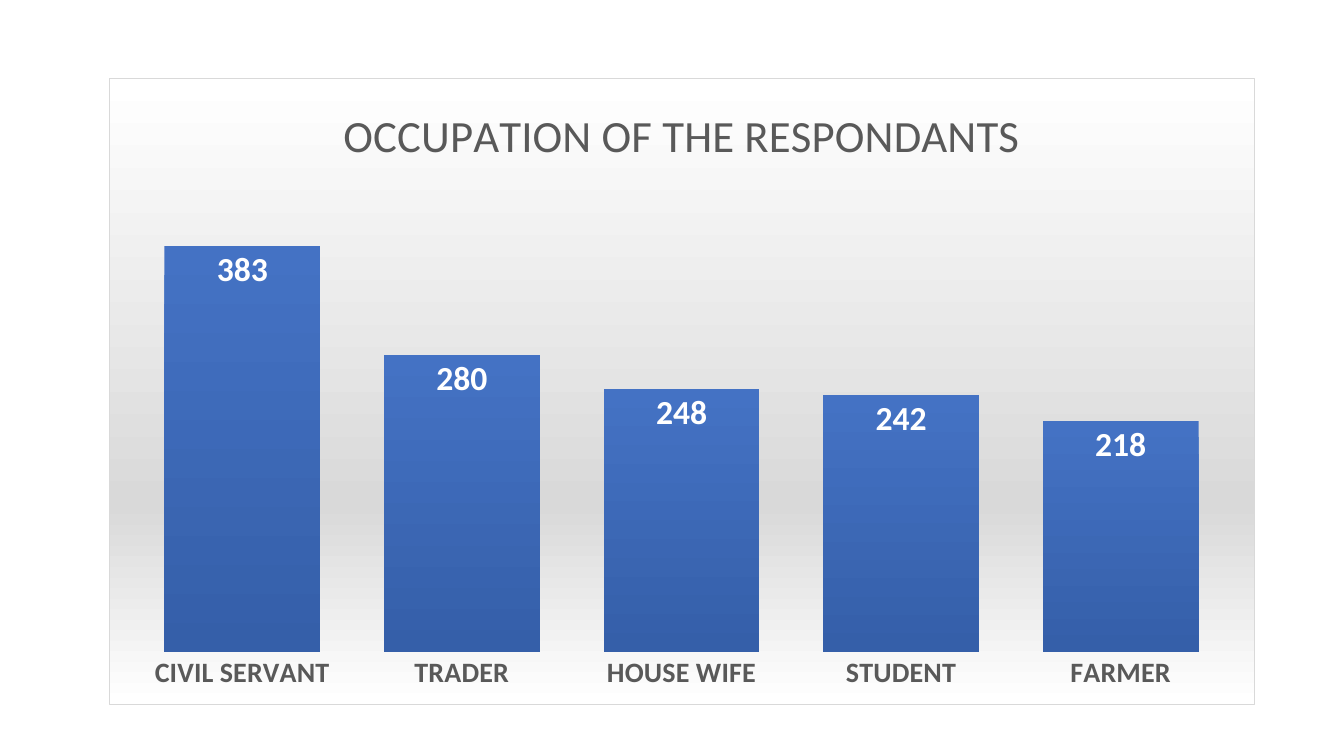
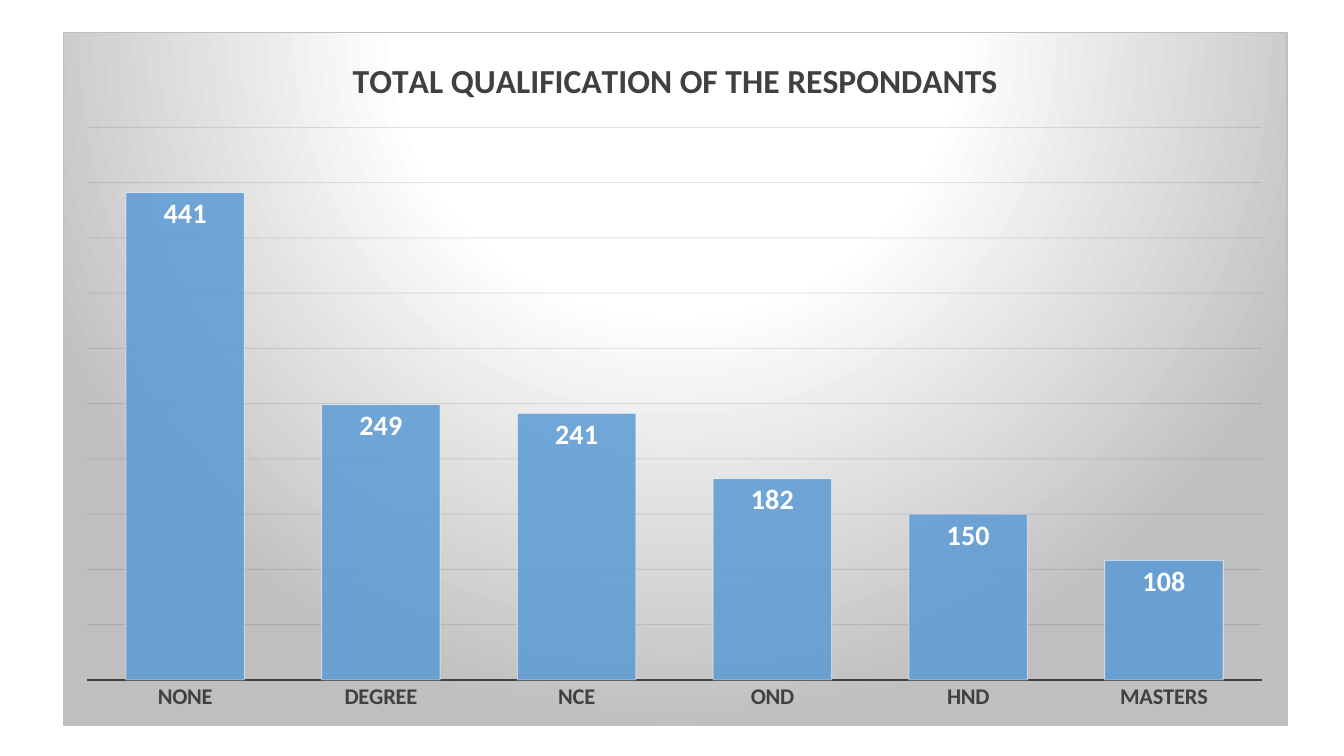
from dataclasses import dataclass
from typing import Any, NamedTuple, Optional

from lxml import etree
from pptx import Presentation
from pptx import util as u
from pptx.chart import data as chart_data
from pptx.dml import color
from pptx.enum import chart as chart_enum
from pptx.oxml import ns

EMU_PER_PX = 9144  # 100 px to the inch


def px(length: int) -> u.Emu:
    return u.Emu(length * EMU_PER_PX)


# Shared look
@dataclass(frozen=True)
class Theme:
    font: str = "Calibri"
    white: str = "FFFFFF"
    text_grey: str = "595959"
    dark_grey: str = "404040"
    near_black: str = "0D0D0D"
    light_grey: str = "D9D9D9"
    mid_grey: str = "BFBFBF"
    royal_blue: str = "4472C4"
    deep_blue: str = "355FA9"
    sky_blue: str = "5B9BD5"
    title_large: int = 32
    title_small: int = 24
    value_large: int = 24
    value_small: int = 20
    category_large: int = 20
    category_small: int = 16
    thin_line: float = 0.75
    axis_line: float = 1.5


THEME = Theme()


class Box(NamedTuple):
    left: int
    top: int
    width: int
    height: int


class Stop(NamedTuple):
    percent: int
    rgb: str
    opacity: int = 100


class Fill(NamedTuple):
    """One stop is a solid fill; more stops run downwards or around a focus."""
    stops: tuple[Stop, ...]
    focus: Optional[Box] = None  # left, top, right, bottom insets in percent


class BarChart(NamedTuple):
    title: str
    counts: dict[str, int]
    frame: Box
    plot: Box
    top_value: int
    gap: int
    ink: str
    title_size: int
    title_bold: bool
    value_size: int
    category_size: int
    area: Fill
    border: str
    bars: Fill
    bar_edge: Optional[Stop] = None
    grid: Optional[Stop] = None
    baseline: Optional[str] = None


CHARTS = (
    BarChart(
        title="OCCUPATION OF THE RESPONDANTS",
        counts={"CIVIL SERVANT": 383, "TRADER": 280, "HOUSE WIFE": 248,
                "STUDENT": 242, "FARMER": 218},
        frame=Box(108, 77, 1137, 622), plot=Box(131, 173, 1090, 474),
        top_value=450, gap=41, ink=THEME.text_grey,
        title_size=THEME.title_large, title_bold=False,
        value_size=THEME.value_large, category_size=THEME.category_large,
        area=Fill((Stop(0, THEME.white), Stop(68, THEME.light_grey),
                   Stop(100, THEME.white))),
        border=THEME.light_grey,
        bars=Fill((Stop(0, THEME.royal_blue), Stop(100, THEME.deep_blue))),
    ),
    BarChart(
        title="TOTAL QUALIFICATION OF THE RESPONDANTS",
        counts={"NONE": 441, "DEGREE": 249, "NCE": 241, "OND": 182,
                "HND": 150, "MASTERS": 108},
        frame=Box(62, 32, 1215, 688), plot=Box(86, 126, 1166, 549),
        top_value=500, gap=65, ink=THEME.dark_grey,
        title_size=THEME.title_small, title_bold=True,
        value_size=THEME.value_small, category_size=THEME.category_small,
        area=Fill((Stop(0, THEME.white), Stop(39, THEME.white),
                   Stop(100, THEME.mid_grey)), Box(50, -80, 50, 180)),
        border=THEME.mid_grey,
        bars=Fill((Stop(0, THEME.sky_blue, 85),)),
        bar_edge=Stop(0, THEME.white, 50),
        grid=Stop(0, THEME.near_black, 10),
        baseline=THEME.dark_grey,
    ),
)


# Formatting helpers
def assign(target: Any, formats: dict[str, Any]) -> None:
    for name, value in formats.items():
        setattr(target, name, value)


def set_font(font: Any, size: int, rgb: str, bold: bool) -> None:
    assign(font, {"name": THEME.font, "size": u.Pt(size), "bold": bold})
    font.color.rgb = color.RGBColor.from_string(rgb)


def add(parent: Any, tag: str, **attributes: Any) -> Any:
    return etree.SubElement(parent, ns.qn(tag),
                            {name: str(value) for name, value in attributes.items()})


def add_color(parent: Any, stop: Stop) -> None:
    tint = add(parent, "a:srgbClr", val=stop.rgb)
    if stop.opacity < 100:
        add(tint, "a:alpha", val=stop.opacity * 1000)


def add_fill(parent: Any, fill: Fill) -> None:
    if len(fill.stops) == 1:
        add_color(add(parent, "a:solidFill"), fill.stops[0])
        return
    gradient = add(parent, "a:gradFill", rotWithShape=1)
    stop_list = add(gradient, "a:gsLst")
    for stop in fill.stops:
        add_color(add(stop_list, "a:gs", pos=stop.percent * 1000), stop)
    if fill.focus is None:
        add(gradient, "a:lin", ang=90 * 60000, scaled=0)
    else:
        sides = (side * 1000 for side in fill.focus)
        add(add(gradient, "a:path", path="circle"), "a:fillToRect",
            **dict(zip("ltrb", sides)))


def paint(properties: Any, fill: Optional[Fill], line: Optional[Stop]) -> None:
    """Replace the fill and line held by a chart part's shape properties."""
    for child in list(properties):
        properties.remove(child)
    if fill:
        add_fill(properties, fill)
    edge = add(properties, "a:ln", w=u.Pt(THEME.thin_line))
    if line:
        add_color(add(edge, "a:solidFill"), line)
    else:
        add(edge, "a:noFill")


def place_plot(plot_area: Any, frame: Box, plot: Box) -> None:
    """Fix the inner plot area as fractions of the chart frame."""
    for old in plot_area.findall(ns.qn("c:layout")):
        plot_area.remove(old)
    layout = add(plot_area, "c:layout")
    plot_area.insert(0, layout)
    manual = add(layout, "c:manualLayout")
    add(manual, "c:layoutTarget", val="inner")
    for axis in "xy":
        add(manual, f"c:{axis}Mode", val="edge")
    fractions = {
        "x": (plot.left - frame.left) / frame.width,
        "y": (plot.top - frame.top) / frame.height,
        "w": plot.width / frame.width,
        "h": plot.height / frame.height,
    }
    for name, value in fractions.items():
        add(manual, f"c:{name}", val=round(value, 4))


# Chart parts
def style_axes(chart: Any, design: BarChart) -> None:
    categories, values = chart.category_axis, chart.value_axis
    assign(categories, {"major_tick_mark": chart_enum.XL_TICK_MARK.NONE,
                        "has_major_gridlines": False})
    set_font(categories.tick_labels.font, design.category_size, design.ink, True)
    line = categories.format.line
    if design.baseline:
        line.color.rgb = color.RGBColor.from_string(design.baseline)
        line.width = u.Pt(THEME.axis_line)
    else:
        line.fill.background()
    assign(values, {"minimum_scale": 0, "maximum_scale": design.top_value,
                    "major_unit": 50, "visible": False,
                    "has_major_gridlines": design.grid is not None})
    if design.grid:
        values.major_gridlines.format.line.width = u.Pt(THEME.thin_line)
        gridlines = next(chart.element.iter(ns.qn("c:majorGridlines")))
        paint(gridlines.find(ns.qn("c:spPr")), None, design.grid)


def style_bars(chart: Any, design: BarChart) -> None:
    bars = chart.plots[0]
    assign(bars, {"gap_width": design.gap, "vary_by_categories": False,
                  "has_data_labels": True})
    assign(bars.data_labels, {
        "show_value": True,
        "position": chart_enum.XL_LABEL_POSITION.INSIDE_END})
    set_font(bars.data_labels.font, design.value_size, THEME.white, True)
    series = bars.series[0]
    series.invert_if_negative = False
    series.format.fill.solid()
    element = next(chart.element.iter(ns.qn("c:ser")))
    paint(element.find(ns.qn("c:spPr")), design.bars, design.bar_edge)


def add_bar_chart(page: Any, design: BarChart) -> None:
    data = chart_data.CategoryChartData()
    data.categories = list(design.counts)
    data.add_series("Series 1", list(design.counts.values()))
    chart = page.shapes.add_chart(
        chart_enum.XL_CHART_TYPE.COLUMN_CLUSTERED,
        *map(px, design.frame), data).chart
    assign(chart, {"has_legend": False, "has_title": True})
    set_font(chart.font, 10, "000000", False)

    # Title
    chart.chart_title.include_in_layout = False
    para = chart.chart_title.text_frame.paragraphs[0]
    span = para.add_run()
    span.text = design.title
    set_font(span.font, design.title_size, design.ink, design.title_bold)

    style_axes(chart, design)
    style_bars(chart, design)

    # Chart area and plot
    body = chart.element.find(ns.qn("c:chart"))
    place_plot(body.find(ns.qn("c:plotArea")), design.frame, design.plot)
    area = add(chart.element, "c:spPr")
    body.addnext(area)
    paint(area, design.area, Stop(0, design.border))


def main() -> None:
    deck = Presentation()
    assign(deck, {"slide_width": px(1333), "slide_height": px(750)})
    for design in CHARTS:
        page = deck.slides.add_slide(deck.slide_layouts[6])
        add_bar_chart(page, design)
    deck.save("out.pptx")


if __name__ == "__main__":
    main()
